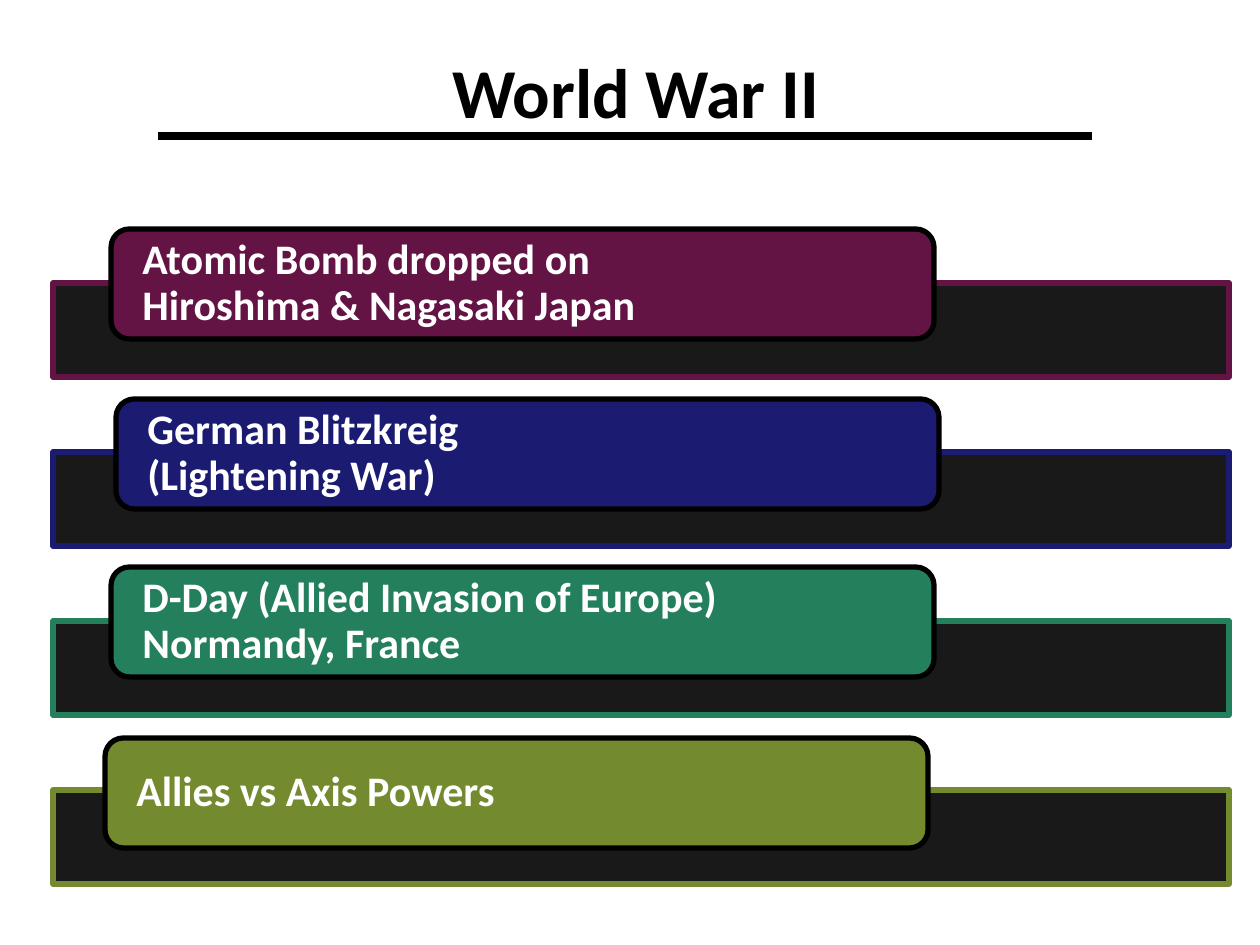
"""Build a World War II topic slide with four labelled bars."""
from lxml import etree
from pptx import Presentation
from pptx import util as u
from pptx.dml.color import RGBColor
from pptx.enum import shapes, text
from pptx.oxml import ns

COLORS = {
    "black": "000000",
    "white": "FFFFFF",
    "plum": "641345",
    "navy": "1B1B72",
    "green": "247F5D",
    "olive": "748A2F",
}
EMU_PER_PX = 914400 / 126

TOPICS = [
    ("plum", 111, 229, ["Atomic Bomb dropped on", "Hiroshima & Nagasaki Japan"]),
    ("navy", 116, 399, ["German Blitzkreig", "(Lightening War)"]),
    ("green", 111, 567, ["D-Day (Allied Invasion of Europe) Normandy, France"]),
    ("olive", 105, 738, ["Allies vs Axis Powers"]),
]
BAR_TOP, BAR_PITCH = 283, 169


def px(n):
    return u.Emu(round(n * EMU_PER_PX))


def rgb(name):
    return RGBColor.from_string(COLORS[name])


class Deck:
    def __init__(self, width, height, font):
        self.prs = Presentation()
        self.prs.slide_width, self.prs.slide_height = px(width), px(height)
        self.font = font
        self.s = self.prs.slides.add_slide(self.prs.slide_layouts[6])

    def add_runs(self, p, lines, size, color):
        for i, line in enumerate(lines):
            if i:
                p.add_line_break()
            r = p.add_run()
            r.text = line
            r.font.name, r.font.size, r.font.bold = self.font, u.Pt(size), True
            r.font.color.rgb = rgb(color)

    def shape(self, kind, x, y, w, h, fill, line):
        sp = self.s.shapes.add_shape(kind, px(x), px(y), px(w), px(h))
        sp.shadow.inherit = False
        sp.fill.solid()
        sp.fill.fore_color.rgb = rgb(fill)
        sp.line.color.rgb = rgb(line)
        sp.line.width = u.Pt(3)
        return sp

    def bar(self, x, y, w, h, line):
        sp = self.shape(shapes.MSO_SHAPE.RECTANGLE, x, y, w, h, "black", line)
        clr = sp._element.spPr.find(ns.qn("a:solidFill"))[0]
        etree.SubElement(clr, ns.qn("a:alpha"), val="90000")

    def label(self, x, y, w, h, fill, lines):
        sp = self.shape(shapes.MSO_SHAPE.ROUNDED_RECTANGLE, x, y, w, h, fill, "black")
        tf = sp.text_frame
        tf.word_wrap = True
        tf.vertical_anchor = text.MSO_ANCHOR.MIDDLE
        tf.margin_left = tf.margin_right = px(26)
        tf.margin_top = tf.margin_bottom = 0
        p = tf.paragraphs[0]
        p.alignment = text.PP_ALIGN.LEFT
        p.line_spacing = 0.9
        self.add_runs(p, lines, 24, "white")

    def title(self, x, y, w, h, line):
        tf = self.s.shapes.add_textbox(px(x), px(y), px(w), px(h)).text_frame
        tf.word_wrap = True
        p = tf.paragraphs[0]
        p.alignment = text.PP_ALIGN.CENTER
        self.add_runs(p, [line], 40, "black")

    def rule(self, x1, x2, y):
        c = self.s.shapes.add_connector(
            shapes.MSO_CONNECTOR.STRAIGHT, px(x1), px(y), px(x2), px(y))
        c.line.color.rgb = rgb("black")
        c.line.width = u.Pt(4.5)
        etree.SubElement(c._element.spPr, ns.qn("a:effectLst"))


def main():
    deck = Deck(1260, 945, "Calibri")
    for i, (color, x, y, lines) in enumerate(TOPICS):
        deck.bar(53, BAR_TOP + i * BAR_PITCH, 1176, 94, color)
        deck.label(x, y, 823, 110, color, lines)
    deck.title(168, 42, 935, 97, "World War II")
    deck.rule(158, 1092, 136)
    deck.prs.save("out.pptx")


if __name__ == "__main__":
    main()
